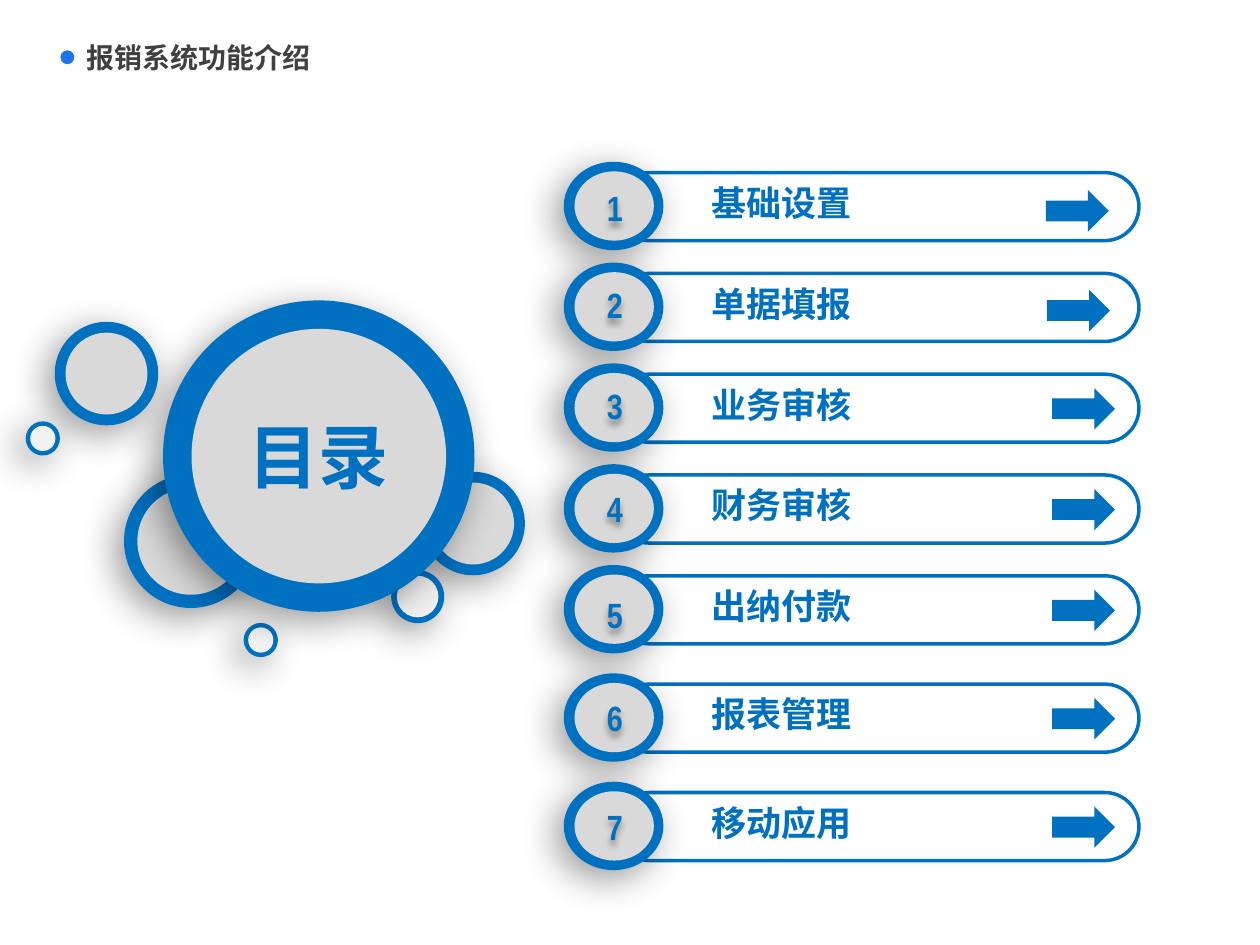
from lxml import etree
from pptx import Presentation, util as u
from pptx.dml.color import RGBColor
from pptx.enum import shapes, text
from pptx.oxml.ns import qn

HUE = {"blue": "0070C0", "dot": "2073EE", "grey": "D9D9D9", "pale": "F2F2F2",
       "ink": "404040", "dark": "000000"}
KIND = shapes.MSO_SHAPE
CJK, LATIN = "Noto Sans CJK SC", "Arial Narrow"
GLOW = {"blurRad": 22, "dist": 7, "dir": 135}
SOFT = {"blurRad": 4, "dist": 3, "dir": 90}

deck = Presentation()
deck.slide_width, deck.slide_height = u.Inches(10), u.Inches(7.5)
slide = deck.slides.add_slide(deck.slide_layouts[6])
col, row = deck.slide_width / 100, deck.slide_height / 75


def draw(home, kind, box, fill=None, line=None, glow=None):
    x, y, w, h = box
    item = home.shapes.add_shape(kind, int(x * col), int(y * row), int(w * col), int(h * row))
    item.shadow.inherit = False
    for part, hue in ((item.fill, fill), (item.line.fill, line and "blue")):
        if hue:
            part.solid()
            part.fore_color.rgb = RGBColor.from_string(HUE[hue])
        else:
            part.background()
    if line:
        item.line.width = u.Pt(line)
    if glow:
        fx = item._element.spPr.find(qn("a:effectLst"))
        size = {k: str(v * (60000 if k == "dir" else 12700)) for k, v in glow.items()}
        shade = etree.SubElement(fx, qn("a:outerShdw"), algn="ctr", rotWithShape="0", **size)
        tint = etree.SubElement(shade, qn("a:srgbClr"), val=HUE["dark"])
        etree.SubElement(tint, qn("a:alpha"), val="40000")
    return item


def write(home, words, box, size, face=CJK, hue="blue", align="LEFT", inset=0, glow=None):
    item = draw(home, KIND.RECTANGLE, box, glow=glow)
    frame = item.text_frame
    form = {"word_wrap": True, "margin_left": inset, "margin_right": inset,
            "margin_top": 0, "margin_bottom": 0,
            "vertical_anchor": text.MSO_ANCHOR.MIDDLE if inset else text.MSO_ANCHOR.TOP,
            "auto_size": text.MSO_AUTO_SIZE.NONE if inset else text.MSO_AUTO_SIZE.SHAPE_TO_FIT_TEXT}
    for key, val in form.items():
        setattr(frame, key, val)
    para = frame.paragraphs[0]
    para.alignment = text.PP_ALIGN[align]
    run = para.add_run()
    run.text = words
    for key, val in {"size": u.Pt(size), "bold": True, "name": face}.items():
        setattr(run.font, key, val)
    run.font.color.rgb = RGBColor.from_string(HUE[hue])
    etree.SubElement(run._r.get_or_add_rPr(), qn("a:ea"), typeface=face)


draw(slide, KIND.OVAL, (4.8, 4, 1.1, 1.1), "dot")
write(slide, "报销系统功能介绍", (5.9, 1.2, 88.9, 6.7), 16, hue="ink", inset=u.Inches(0.1))

rings = [
    (33.6, 37.6, 7.9, 0.7, "grey"),
    (31.2, 45.4, 3.9, 0.3, "pale"),
    (10, 37.8, 10.3, 0.9, "grey"),
    (19.5, 49.6, 2.4, 0.2, "pale"),
    (13.1, 24, 24.4, 2.1, "grey"),
    (4.5, 25.7, 7.9, 0.7, "grey"),
    (2.2, 33.6, 2.4, 0.2, "pale"),
]
for x, y, size, rim, hue in rings:
    pair = slide.shapes.add_group_shape()
    core = size - 2 * rim
    draw(pair, KIND.OVAL, (x, y, size, size), "blue", 2.25, GLOW)
    draw(pair, KIND.OVAL, (x + rim, y + rim, core, core), hue)
write(slide, "目录", (17.1, 32.8, 16.3, 6.7), 40, align="CENTER")

items = [
    ("基础设置", 1.8, 83, 2.1),
    ("单据填报", 1.5, 83.1, 2),
    ("业务审核", 1.5, 83.5, 1.8),
    ("财务审核", 1.7, 83.5, 1.8),
    ("出纳付款", 2.1, 83.5, 1.8),
    ("报表管理", 1.7, 83.5, 1.8),
    ("移动应用", 1.7, 83.5, 1.8),
]
for i, (name, drop, tip, dip) in enumerate(items):
    top = 13 + 8 * i + 0.6 * max(0, i - 4)
    write(slide, name, (56.5, top + 1.4, 23.4, 3.4), 20)
    bar = draw(slide, KIND.ROUNDED_RECTANGLE, (48.8, top + 0.7, 41.6, 5.4), line=2)
    bar.adjustments[0] = 0.5
    draw(slide, KIND.RIGHT_ARROW, (tip, top + dip, 5, 3.3), "blue")
    badge = slide.shapes.add_group_shape()
    draw(badge, KIND.OVAL, (44.9, top, 7.6, 6.7), "blue", 2.25, GLOW)
    draw(badge, KIND.OVAL, (45.6, top + 0.6, 6.3, 5.5), "grey")
    write(badge, str(i + 1), (45.7, top + drop, 6.2, 3.4), 20, LATIN, align="CENTER", glow=SOFT)

deck.save("out.pptx")
